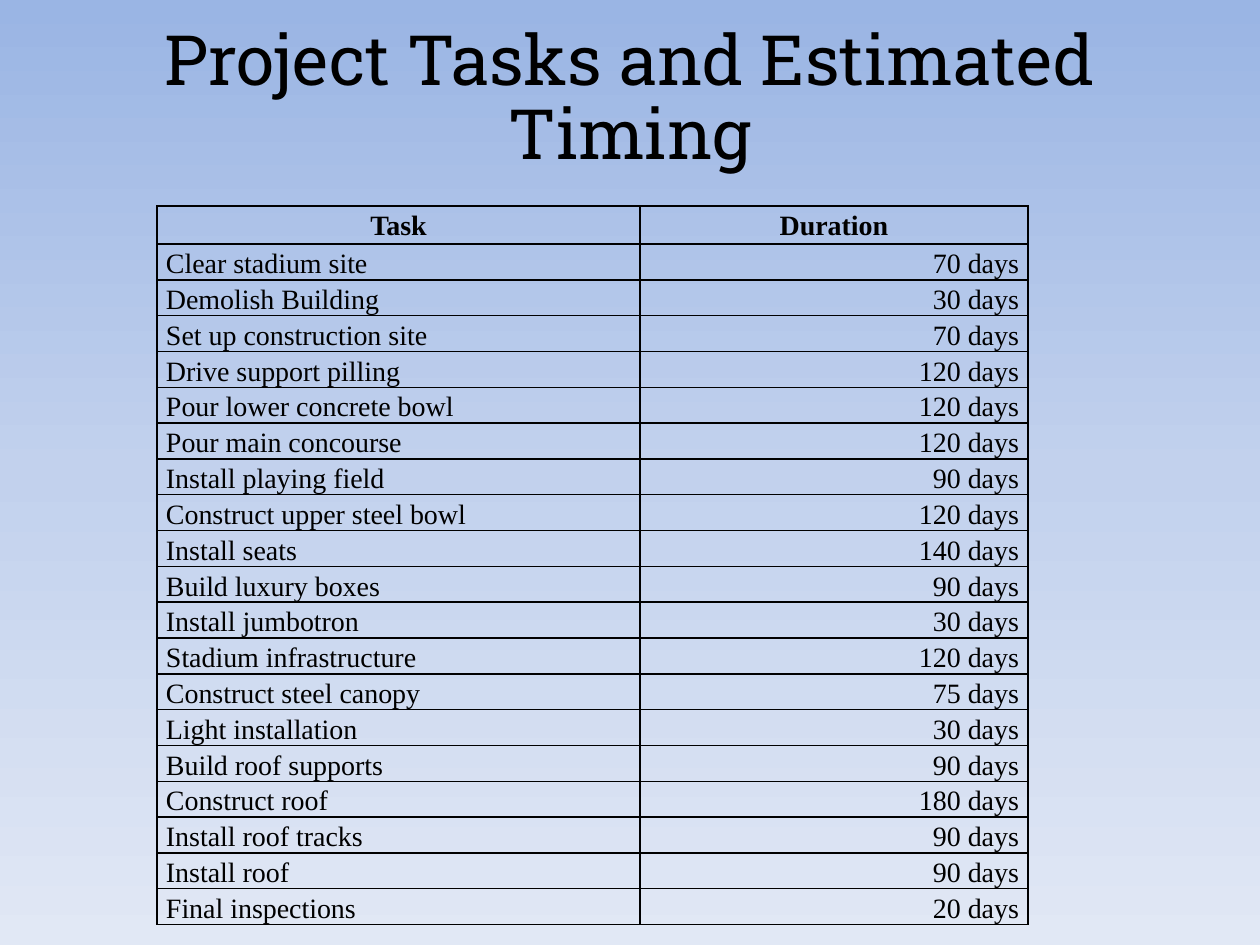
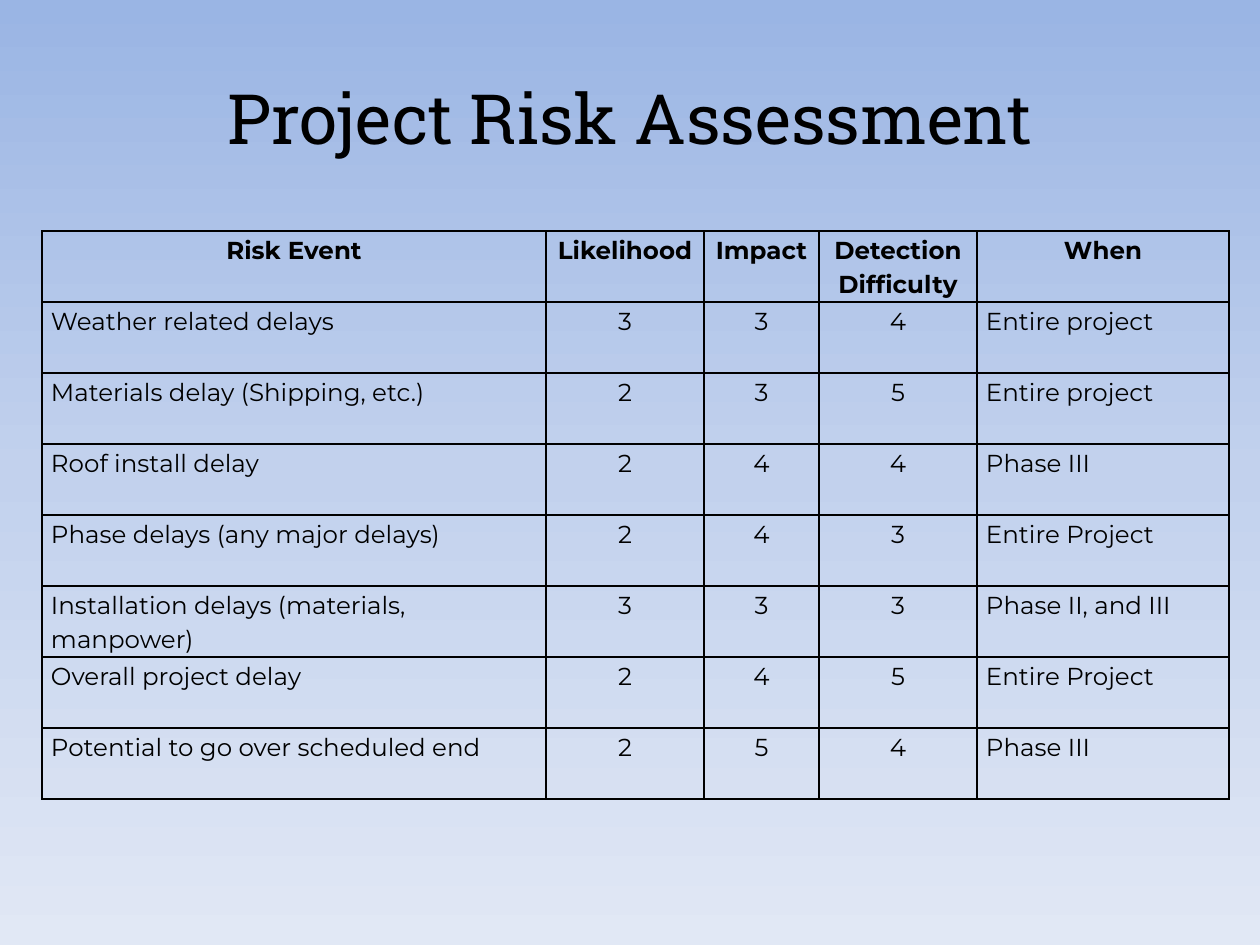
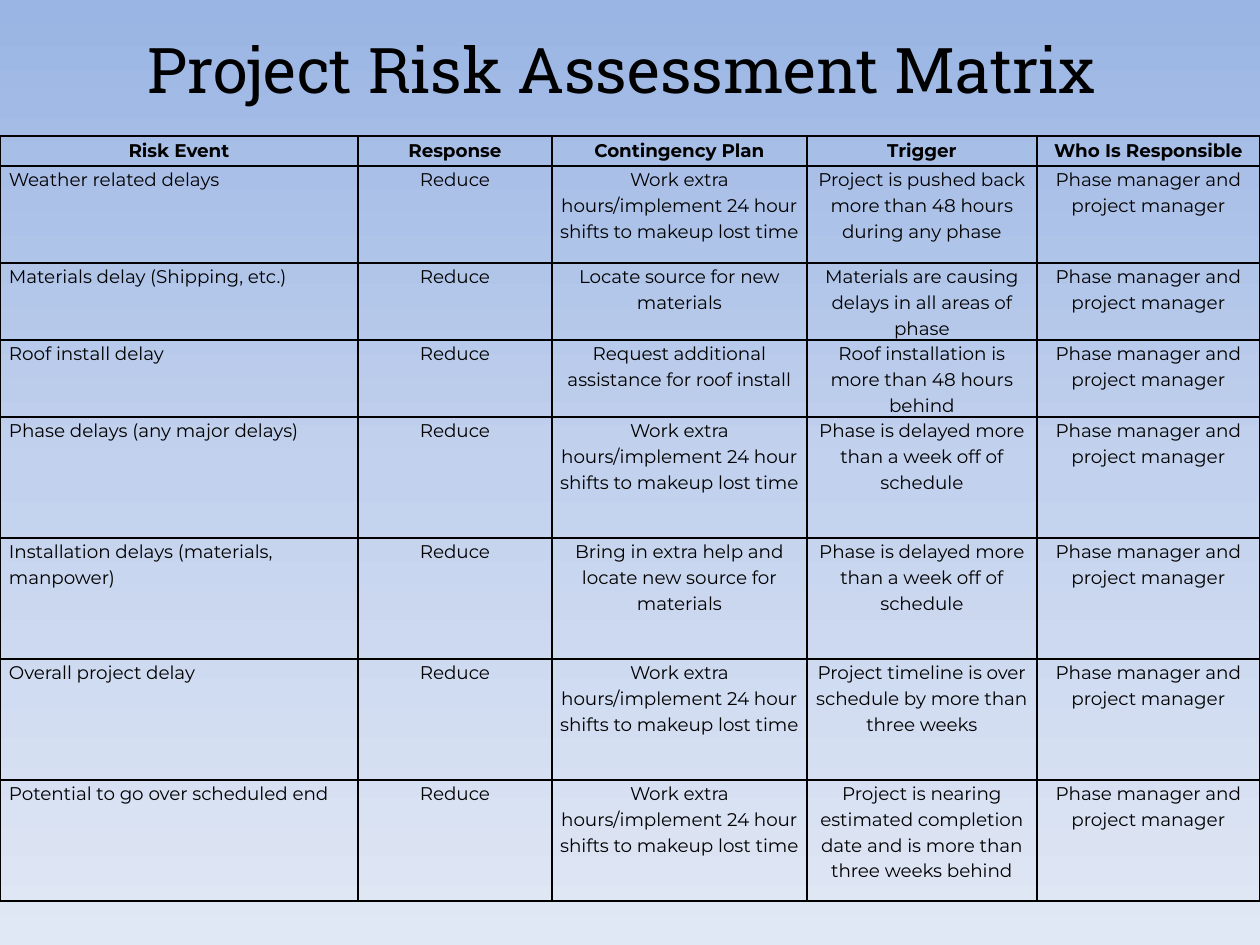
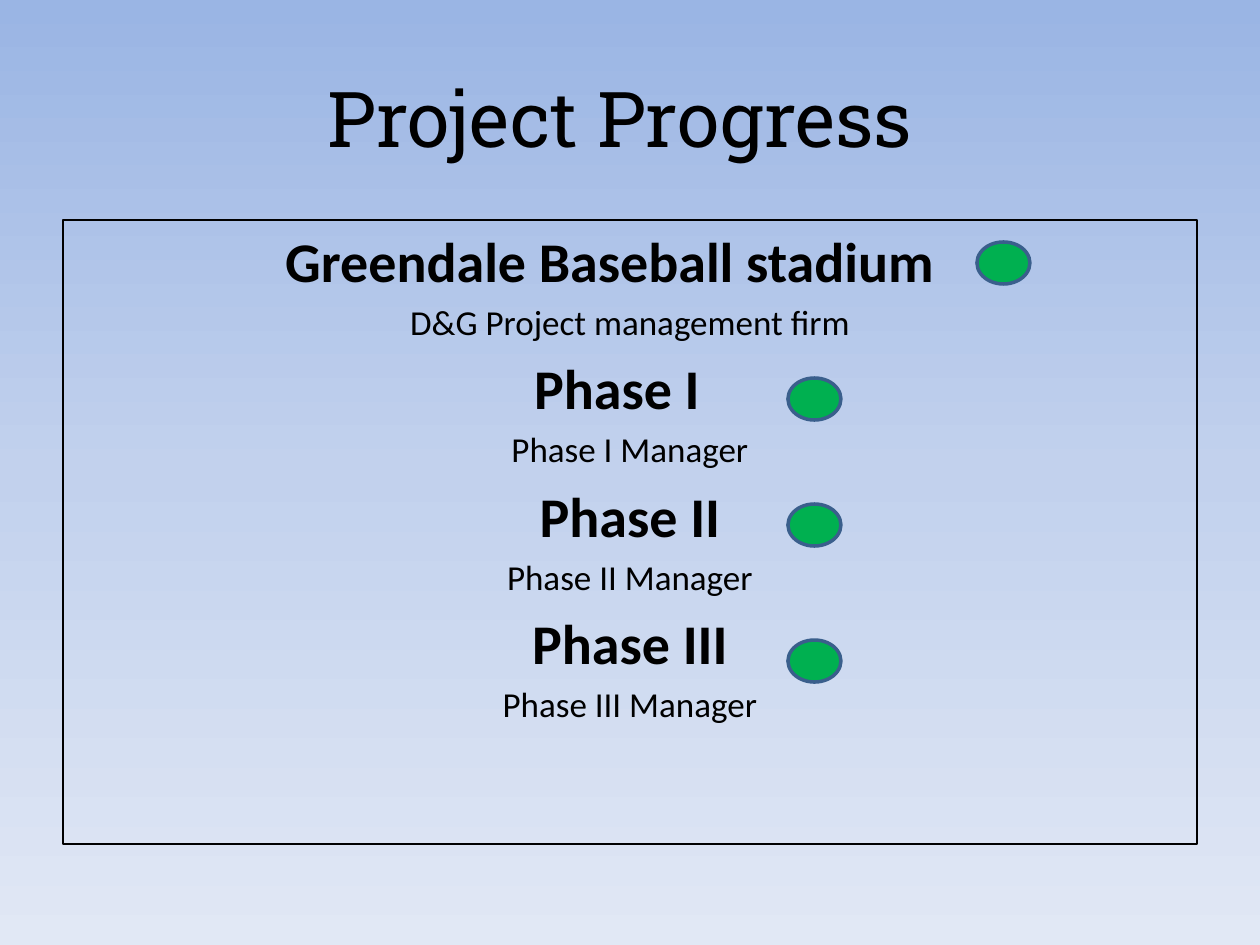
"""Build the stadium project deck: task timing, risk tables and progress."""
import copy

import pptx
import pptx.dml.color
import pptx.enum.dml
import pptx.enum.shapes
import pptx.enum.text
import pptx.oxml
import pptx.oxml.ns
import pptx.util

RGBColor = pptx.dml.color.RGBColor
ALIGN = pptx.enum.text.PP_ALIGN
LEFT, CENTER, RIGHT = ALIGN.LEFT, ALIGN.CENTER, ALIGN.RIGHT
qn = pptx.oxml.ns.qn

BLACK = RGBColor(0x00, 0x00, 0x00)
GREEN = RGBColor(0x00, 0xB0, 0x50)
DOT_EDGE = RGBColor(0x3A, 0x5F, 0x8C)
SKY = [
    (0, RGBColor(0x9A, 0xB5, 0xE4)),
    (0.5, RGBColor(0xC2, 0xD1, 0xED)),
    (1, RGBColor(0xE1, 0xE8, 0xF5)),
]

TITLE_FONT = "Roboto Slab"
RISK_FONT = "Montserrat"
TASK_FONT = "Times New Roman"
BODY_FONT = "Calibri"

PX_PER_INCH = 126
TITLE_LAYOUT, BODY_LAYOUT = 5, 1

TASKS = [
    ("Clear stadium site", 70),
    ("Demolish Building", 30),
    ("Set up construction site", 70),
    ("Drive support pilling", 120),
    ("Pour lower concrete bowl", 120),
    ("Pour main concourse", 120),
    ("Install playing field", 90),
    ("Construct upper steel bowl", 120),
    ("Install seats", 140),
    ("Build luxury boxes", 90),
    ("Install jumbotron", 30),
    ("Stadium infrastructure", 120),
    ("Construct steel canopy", 75),
    ("Light installation", 30),
    ("Build roof supports", 90),
    ("Construct roof", 180),
    ("Install roof tracks", 90),
    ("Install roof", 90),
    ("Final inspections", 20),
]

RISKS = [
    "Weather related delays",
    "Materials delay (Shipping, etc.)",
    "Roof install delay",
    "Phase delays (any major delays)",
    "Installation delays (materials, manpower)",
    "Overall project delay",
    "Potential to go over scheduled end",
]

RATINGS = [
    ("3", "3", "4", "Entire project"),
    ("2", "3", "5", "Entire project"),
    ("2", "4", "4", "Phase III"),
    ("2", "4", "3", "Entire Project"),
    ("3", "3", "3", "Phase II, and III"),
    ("2", "4", "5", "Entire Project"),
    ("2", "5", "4", "Phase III"),
]

EXTRA_SHIFTS = "Work extra hours/implement 24 hour shifts to makeup lost time"
WEEK_LATE = "Phase is delayed more than a week off of schedule"
MANAGERS = "Phase manager and project manager"
RESPONSES = [
    (EXTRA_SHIFTS, "Project is pushed back more than 48 hours during any phase"),
    ("Locate source for new materials",
     "Materials are causing delays in all areas of phase"),
    ("Request additional assistance for roof install",
     "Roof installation is more than 48 hours behind"),
    (EXTRA_SHIFTS, WEEK_LATE),
    ("Bring in extra help and locate new source for materials", WEEK_LATE),
    (EXTRA_SHIFTS, "Project timeline is over schedule by more than three weeks"),
    (EXTRA_SHIFTS,
     "Project is nearing estimated completion date and is more than three weeks behind"),
]

PROGRESS = [
    ("Greendale Baseball stadium", "D&G Project management firm", 40),
    ("Phase I", "Phase I Manager", 26),
    ("Phase II", "Phase II Manager", 0),
    ("Phase III", "Phase III Manager", 0),
]
DOTS = [(977, 242), (788, 378), (788, 504), (788, 640)]


def px(length):
    return pptx.util.Emu(round(length * 914400 / PX_PER_INCH))


class Deck:
    def __init__(self):
        self.presentation = pptx.Presentation()
        self.presentation.slide_width = px(1260)
        self.presentation.slide_height = px(945)
        self.slide = None
        self.paint_background()

    def paint_background(self):
        master = self.presentation.slide_master
        fill = master.background.fill
        fill.gradient()
        fill.gradient_angle = 270
        stop_list = next(master.element.iter(qn("a:gsLst")))
        stop_list.append(copy.deepcopy(stop_list[-1]))
        for stop, (position, color) in zip(fill.gradient_stops, SKY):
            stop.position = position
            stop.color.rgb = color

    def place(self, shape, left, top, width, height):
        shape.left, shape.top = px(left), px(top)
        shape.width, shape.height = px(width), px(height)

    def add_run(self, paragraph, text, font, size, bold=False):
        run = paragraph.add_run()
        run.text = text
        run.font.name = font
        run.font.size = pptx.util.Pt(size)
        run.font.bold = bold
        run.font.color.rgb = BLACK

    def add_slide(self, title, top, height, size, layout=TITLE_LAYOUT, spacing=1.0):
        layouts = self.presentation.slide_layouts
        self.slide = self.presentation.slides.add_slide(layouts[layout])
        shape = self.slide.shapes.title
        self.place(shape, 63, top, 1134, height)
        frame = shape.text_frame
        frame.auto_size = pptx.enum.text.MSO_AUTO_SIZE.NONE
        frame.vertical_anchor = pptx.enum.text.MSO_ANCHOR.MIDDLE
        paragraph = frame.paragraphs[0]
        paragraph.alignment = CENTER
        paragraph.line_spacing = spacing
        self.add_run(paragraph, title, TITLE_FONT, size)

    def add_borders(self, cell):
        properties = cell._tc.get_or_add_tcPr()
        for side in ("lnL", "lnR", "lnT", "lnB"):
            properties.append(pptx.oxml.parse_xml(
                f'<a:{side} {pptx.oxml.ns.nsdecls("a")} w="12700"><a:solidFill>'
                f'<a:srgbClr val="{BLACK}"/></a:solidFill></a:{side}>'))

    def fill_cell(self, cell, text, alignment, font, size, bold):
        self.add_borders(cell)
        cell.fill.background()
        inset = 8 if alignment == CENTER else 9
        cell.margin_left = cell.margin_right = px(inset)
        cell.margin_top = cell.margin_bottom = 0
        paragraph = cell.text_frame.paragraphs[0]
        paragraph.alignment = alignment
        paragraph.line_spacing = 1.15
        self.add_run(paragraph, text, font, size, bold)

    def add_table(self, left, top, widths, heights, rows, alignments, font, size):
        table = self.slide.shapes.add_table(
            len(heights), len(widths), px(left), px(top),
            px(sum(widths)), px(sum(heights))).table
        table.first_row = table.horz_banding = False
        for column, width in zip(table.columns, widths):
            column.width = px(width)
        for row_index, (height, texts) in enumerate(zip(heights, rows)):
            table.rows[row_index].height = px(height)
            header = row_index == 0
            for column_index, text in enumerate(texts):
                alignment = CENTER if header else alignments[column_index]
                self.fill_cell(table.cell(row_index, column_index), text,
                               alignment, font, size, header)

    def add_progress_list(self, entries):
        body = self.slide.placeholders[1]
        self.place(body, 63, 220, 1134, 624)
        body.line.color.rgb = BLACK
        body.line.width = pptx.util.Pt(0.75)
        frame = body.text_frame
        frame.auto_size = pptx.enum.text.MSO_AUTO_SIZE.NONE
        lines = [line for heading, manager, margin in entries
                 for line in ((heading, 32, True, margin), (manager, 20, False, 0))]
        for index, (text, size, bold, margin) in enumerate(lines):
            paragraph = frame.add_paragraph() if index else frame.paragraphs[0]
            paragraph.alignment = CENTER
            properties = paragraph._p.get_or_add_pPr()
            properties.set("marL", str(px(48)))
            properties.set("indent", str(px(-48)))
            properties.set("marR", str(px(margin)))
            properties.append(pptx.oxml.parse_xml(
                f'<a:buNone {pptx.oxml.ns.nsdecls("a")}/>'))
            self.add_run(paragraph, text, BODY_FONT, size, bold)

    def add_status_dot(self, left, top):
        dot = self.slide.shapes.add_shape(
            pptx.enum.shapes.MSO_SHAPE.OVAL, px(left), px(top), px(53), px(42))
        dot.shadow.inherit = False
        dot.fill.solid()
        dot.fill.fore_color.rgb = GREEN
        dot.line.color.rgb = DOT_EDGE
        dot.line.width = pptx.util.Pt(2)


def main():
    deck = Deck()

    deck.add_slide("Project Tasks and Estimated Timing", 21, 158, 39.6, spacing=0.9)
    task_rows = [("Task", "Duration")]
    task_rows += [(task, f"{days} days") for task, days in TASKS]
    deck.add_table(157, 206, [483, 388], [38] + [35] * len(TASKS), task_rows,
                   [LEFT, RIGHT], TASK_FONT, 16)

    deck.add_slide("Project Risk Assessment", 38, 158, 39.6)
    rating_rows = [("Risk Event", "Likelihood", "Impact", "Detection Difficulty", "When")]
    rating_rows += [(risk, *rating) for risk, rating in zip(RISKS, RATINGS)]
    deck.add_table(42, 231, [504, 158, 115, 158, 252], [71] * len(rating_rows),
                   rating_rows, [LEFT, CENTER, CENTER, CENTER, LEFT], RISK_FONT, 14)

    deck.add_slide("Project Risk Assessment Matrix ", 0, 136, 36)
    matrix_rows = [("Risk Event", "Response", "Contingency Plan", "Trigger",
                    "Who Is Responsible")]
    matrix_rows += [(risk, "Reduce", plan, trigger, MANAGERS)
                    for risk, (plan, trigger) in zip(RISKS, RESPONSES)]
    deck.add_table(0, 136, [358, 194, 255, 230, 223], [30, 97, 77, 77] + [121] * 4,
                   matrix_rows, [LEFT] + [CENTER] * 4, RISK_FONT, 10.5)

    deck.add_slide("Project Progress ", 38, 158, 44, layout=BODY_LAYOUT)
    deck.add_progress_list(PROGRESS)
    for left, top in DOTS:
        deck.add_status_dot(left, top)

    deck.presentation.save("out.pptx")


if __name__ == "__main__":
    main()
